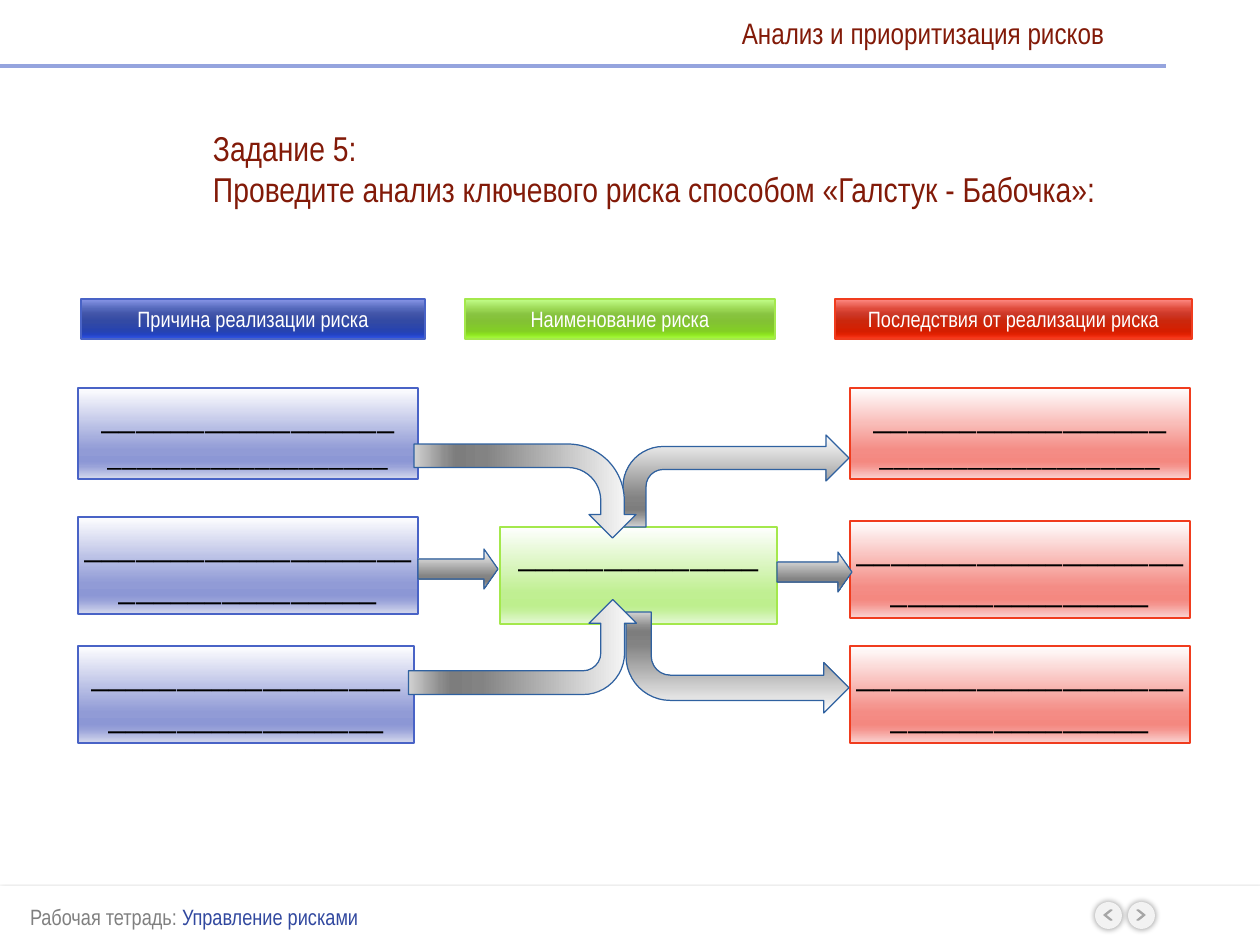
from lxml.etree import SubElement
from pptx import Presentation
from pptx.dml.color import RGBColor
from pptx.enum.shapes import MSO_CONNECTOR, MSO_SHAPE as Preset
from pptx.enum.text import MSO_ANCHOR as Anchor, MSO_AUTO_SIZE, PP_ALIGN as Align
from pptx.oxml.ns import qn
from pptx.util import Pt

PX = 10320
INSET = 6
NARROW, GOTHIC = "Arial Narrow", "TeX Gyre Adventor"

BLACK = RGBColor(0, 0, 0)
WHITE = RGBColor(255, 255, 255)
BROWN = RGBColor(0x82, 0x1A, 0x08)
NAVY = RGBColor(0x31, 0x48, 0x9F)
GREY = RGBColor(0x80, 0x80, 0x80)
BUTTON = RGBColor(0xF2, 0xF2, 0xF2)
CHEVRON = RGBColor(0xA6, 0xA6, 0xA6)
RULE = RGBColor(0x95, 0xA4, 0xDE)
ARROW_EDGE = RGBColor(0x2F, 0x61, 0xA0)
BLUE_EDGE = RGBColor(0x49, 0x63, 0xC6)
GREEN_EDGE = RGBColor(0xA4, 0xE8, 0x4C)
RED_EDGE = RGBColor(0xF0, 0x3C, 0x1E)

HEADER_STOPS = (0, 25, 38, 55, 80, 88, 100)
PALE_STOPS = (0, 68, 81, 86, 100)


def gradient(stops, colours):
    """Pair gradient stops with a row of hex colours."""
    return [(stop, RGBColor.from_string(colour)) for stop, colour in zip(stops, colours.split())]


BLUE_HEADER = gradient(HEADER_STOPS, "8997E8 5266B9 4154A8 334AA4 2743AF 2242C0 3256E9")
GREEN_HEADER = gradient(HEADER_STOPS, "C3FF8B 9BD754 88C441 83C134 83CE25 8CE31E AAFF41")
RED_HEADER = gradient(HEADER_STOPS, "FF8C85 DE4939 CC3727 CB270C D51E00 E12000 FF3C20")
BLUE_PALE = gradient(PALE_STOPS, "FEFEFF 919BD6 8C97D5 99A2D9 D5D9ED")
GREEN_PALE = gradient(PALE_STOPS, "FEFFFE C0EF92 BEEF8E C4F09A E5F8D6")
RED_PALE = gradient(PALE_STOPS, "FFFEFE F48C85 F48880 F5958F FAD4D2")
STEEL = gradient(PALE_STOPS, "FEFEFE 838383 7D7D7D 8D8D8D D2D2D2")


def scaled(box):
    """Turn px lengths into EMU."""
    return [length * PX for length in box]


def write_text(shape, lines, align=Align.LEFT, anchor=Anchor.TOP):
    """Fill a shape with lines, each a list of (text, size, font, colour) runs."""
    frame = shape.text_frame
    frame.word_wrap = True
    frame.auto_size = MSO_AUTO_SIZE.NONE
    frame.vertical_anchor = anchor
    frame.margin_left = frame.margin_right = frame.margin_top = frame.margin_bottom = INSET * PX
    for index, runs in enumerate(lines):
        paragraph = frame.add_paragraph() if index else frame.paragraphs[0]
        paragraph.alignment = align
        paragraph.space_before = Pt(0)
        for text, size, font, colour in runs:
            run = paragraph.add_run()
            run.text = text
            run.font.size = Pt(size)
            run.font.name = font
            run.font.color.rgb = colour


def place(placeholder, box, lines, align=Align.LEFT):
    """Move a placeholder and write its unbulleted text."""
    placeholder.left, placeholder.top, placeholder.width, placeholder.height = scaled(box)
    write_text(placeholder, lines, align)
    for paragraph in placeholder.text_frame.paragraphs:
        properties = paragraph._p.get_or_add_pPr()
        properties.set("marL", "0")
        properties.set("indent", "0")
        properties.insert_element_before(properties.makeelement(qn("a:buNone")), "a:tabLst", "a:defRPr")


def add_preset(slide, preset, box, fill, edge=None, adjustments=()):
    """Add a preset shape with a solid or gradient fill."""
    shape = slide.shapes.add_shape(preset, *scaled(box))
    shape.shadow.inherit = False
    for index, value in enumerate(adjustments):
        shape.adjustments[index] = value
    if isinstance(fill, RGBColor):
        shape.fill.solid()
        shape.fill.fore_color.rgb = fill
    else:
        shape.fill.gradient()
        shape.fill.gradient_angle = 270
        stops = shape._element.spPr.find(".//" + qn("a:gsLst"))
        stops[:] = []
        for position, colour in fill:
            stop = SubElement(stops, qn("a:gs"), pos=str(position * 1000))
            SubElement(stop, qn("a:srgbClr"), val=str(colour))
    if edge is None:
        shape.line.fill.background()
    else:
        shape.line.color.rgb = edge
        shape.line.width = Pt(1)
    return shape


def add_soft_shadow(shape, opacity, blur, distance):
    """Give a shape a soft black shadow below it."""
    effects = shape._element.spPr.find(qn("a:effectLst"))
    shadow = SubElement(effects, qn("a:outerShdw"), blurRad=str(Pt(blur)), dist=str(Pt(distance)),
                        dir="5400000", algn="ctr", rotWithShape="0")
    colour = SubElement(shadow, qn("a:srgbClr"), val="000000")
    SubElement(colour, qn("a:alpha"), val=str(opacity * 1000))


def add_box(slide, box, fill, edge, lines, anchor=Anchor.MIDDLE):
    """Add a bordered box with centred text."""
    shape = add_preset(slide, Preset.RECTANGLE, box, fill, edge)
    write_text(shape, lines, Align.CENTER, anchor)


def add_bent_arrow(slide, box, rotation=0, flipped=False, bend=0.4375):
    """Add a bent arrow, given by its frame before rotation."""
    arrow = add_preset(slide, Preset.BENT_ARROW, box, STEEL, ARROW_EDGE, (0.25, 0.25, 0.25, bend))
    arrow.rotation = rotation
    if flipped:
        arrow._element.spPr.find(qn("a:xfrm")).set("flipH", "1")


def add_footer(slide):
    """Add the footer strip, its caption and the two navigation buttons."""
    strip = add_preset(slide, Preset.RECTANGLE, (0, 886, 1260, 59), WHITE)
    add_soft_shadow(strip, 35, 3, 1.8)
    for left, flipped in ((1095, True), (1128, False)):
        button = add_preset(slide, Preset.OVAL, (left, 902, 27, 27), BUTTON)
        add_soft_shadow(button, 40, 5, 0)
        chevron = add_preset(slide, Preset.CHEVRON, (left + 9, 910, 8, 10), CHEVRON, CHEVRON, (0.79,))
        if flipped:
            chevron._element.spPr.find(qn("a:xfrm")).set("flipH", "1")
    caption = slide.shapes.add_textbox(*scaled((24, 897, 346, 38)))
    write_text(caption, [[("Рабочая тетрадь: ", 18, NARROW, GREY),
                          ("Управление рисками", 18, NARROW, NAVY)]])


def add_rule(slide):
    """Add the line under the title."""
    rule = slide.shapes.add_connector(MSO_CONNECTOR.STRAIGHT, *scaled((0, 66, 1166, 66)))
    rule.line.color.rgb = RULE
    rule.line.width = Pt(3)
    SubElement(rule._element.spPr, qn("a:effectLst"))


def main():
    """Build the bow-tie risk analysis slide."""
    presentation = Presentation()
    presentation.slide_width, presentation.slide_height = scaled((1260, 945))
    slide = presentation.slides.add_slide(presentation.slide_layouts[1])
    title, task = slide.placeholders
    add_footer(slide)
    add_rule(slide)
    place(title, (703, 9, 407, 46), [[("Анализ и приоритизация рисков", 24, NARROW, BROWN)]], Align.RIGHT)
    task_lines = ("Задание 5:", "Проведите анализ ключевого риска способом «Галстук - Бабочка»:")
    place(task, (207, 121, 1050, 91), [[(line, 28, NARROW, BROWN)] for line in task_lines])

    for left, width, fill, edge, text in (
            (465, 310, GREEN_HEADER, GREEN_EDGE, "Наименование риска"),
            (81, 344, BLUE_HEADER, BLUE_EDGE, "Причина реализации риска"),
            (835, 357, RED_HEADER, RED_EDGE, "Последствия от реализации риска")):
        add_box(slide, (left, 299, width, 40), fill, edge, [[(text, 18, NARROW, WHITE)]])

    two_blanks = [[("_" * 17, 28, GOTHIC, BLACK)], [("_" * 19, 24, GOTHIC, BLACK)]]
    long_blank = [[("_" * 34, 28, GOTHIC, BLACK)]]
    add_box(slide, (500, 527, 277, 97), GREEN_PALE, GREEN_EDGE, [[("_" * 14, 28, GOTHIC, BLACK)]], Anchor.TOP)
    for left, fill, edge, middle_top, last_width in (
            (78, BLUE_PALE, BLUE_EDGE, 517, 336), (850, RED_PALE, RED_EDGE, 521, 340)):
        add_box(slide, (left, 388, 340, 91), fill, edge, two_blanks)
        add_box(slide, (left, middle_top, 340, 97), fill, edge, long_blank)
        add_box(slide, (left, 646, last_width, 97), fill, edge, long_blank)

    for box in ((418, 549, 80, 40), (777, 552, 75, 40)):
        add_preset(slide, Preset.RIGHT_ARROW, box, STEEL, ARROW_EDGE, (0.5, 0.35))
    add_bent_arrow(slide, (623, 435, 226, 92))
    add_bent_arrow(slide, (478, 380, 94, 222), rotation=90, bend=0.6)
    add_bent_arrow(slide, (626, 612, 223, 101), rotation=180, flipped=True)
    add_bent_arrow(slide, (475, 533, 95, 228), rotation=90, flipped=True)
    presentation.save("out.pptx")


if __name__ == "__main__":
    main()
